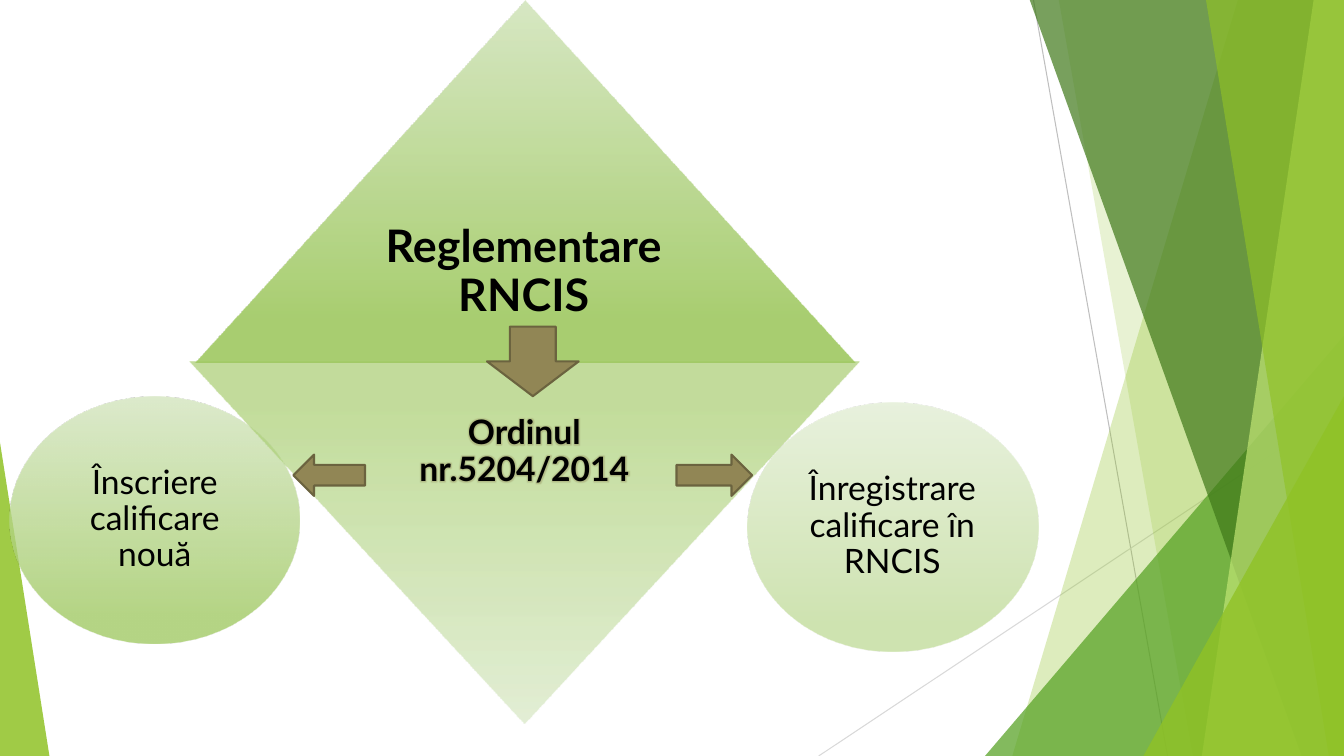
from dataclasses import dataclass

from lxml import etree
from pptx import Presentation
from pptx.dml.color import RGBColor
from pptx.enum.shapes import MSO_CONNECTOR, MSO_SHAPE as SHAPE
from pptx.enum.text import MSO_ANCHOR, PP_ALIGN
from pptx.oxml.ns import qn
from pptx.util import Inches, Pt


@dataclass(frozen=True)
class Theme:
    font: str = "Lato"
    title: int = 32
    body: int = 24
    text: str = "000000"
    lime: str = "90C226"
    green: str = "54A021"
    forest: str = "3F7819"
    pale: str = "C0E474"
    grad_top: str = "D3E5BE"
    grad_end: str = "A0C962"
    arrow: str = "918655"
    arrow_line: str = "6B633F"
    rule_dark: str = "BFBFBF"
    rule_light: str = "D9D9D9"


THEME = Theme()
TOP, RIGHT, BOTTOM = -0.01, 13.33, 7.5


def rgb(value):
    return RGBColor.from_string(value)


def set_alpha(fill, percent):
    for color in fill._xPr.iter(qn("a:srgbClr")):
        etree.SubElement(color, qn("a:alpha"), val=str(percent * 1000))


def fill_solid(sp, color, alpha=None):
    sp.shadow.inherit = False
    sp.fill.solid()
    sp.fill.fore_color.rgb = rgb(color)
    if alpha is not None:
        set_alpha(sp.fill, alpha)
    sp.line.fill.background()


def add_rule(slide, start, end, color):
    line = slide.shapes.add_connector(
        MSO_CONNECTOR.STRAIGHT, *map(Inches, start + end))
    line.line.color.rgb = rgb(color)
    line.line.width = Pt(0.75)
    etree.SubElement(line._element.spPr, qn("a:effectLst"))


def add_band(slide, top_left, bottom_left, color, alpha):
    points = [(top_left, TOP), (RIGHT, TOP), (RIGHT, BOTTOM),
              (bottom_left, BOTTOM)]
    points = [(Inches(x), Inches(y)) for x, y in points]
    builder = slide.shapes.build_freeform(*points[0])
    builder.add_line_segments(points[1:], close=True)
    fill_solid(builder.convert_to_shape(), color, alpha)


def add_corner(slide, box, apex, color, alpha):
    sp = slide.shapes.add_shape(SHAPE.ISOSCELES_TRIANGLE, *map(Inches, box))
    sp.adjustments[0] = apex
    fill_solid(sp, color, alpha)


def add_gradient_shape(slide, kind, box, alpha, rotation=0):
    sp = slide.shapes.add_shape(kind, *map(Inches, box))
    sp.shadow.inherit = False
    sp.rotation = rotation
    sp.fill.gradient()
    sp.fill.gradient_angle = 270
    stops = zip(sp.fill.gradient_stops,
                ((0, THEME.grad_top), (0.88, THEME.grad_end)))
    for stop, (position, color) in stops:
        stop.position = position
        stop.color.rgb = rgb(color)
    set_alpha(sp.fill, alpha)
    sp.line.fill.background()


def add_glow(r):
    effects = etree.Element(qn("a:effectLst"))
    glow = etree.SubElement(effects, qn("a:glow"), rad=str(Pt(5)))
    color = etree.SubElement(glow, qn("a:srgbClr"), val=THEME.arrow)
    etree.SubElement(color, qn("a:alpha"), val="40000")
    r._r.rPr.find(qn("a:solidFill")).addnext(effects)


def add_label(slide, box, text, size, inset=0.1, bold=False, glow=False):
    tf = slide.shapes.add_textbox(*map(Inches, box)).text_frame
    frame = {"word_wrap": True, "vertical_anchor": MSO_ANCHOR.MIDDLE}
    for side in ("left", "top", "right", "bottom"):
        frame[f"margin_{side}"] = Inches(inset)
    for name, value in frame.items():
        setattr(tf, name, value)
    p = tf.paragraphs[0]
    paragraph = {"alignment": PP_ALIGN.CENTER, "line_spacing": 0.9,
                 "space_after": Pt(size * 0.35)}
    for name, value in paragraph.items():
        setattr(p, name, value)
    r = p.add_run()
    r.text = text
    font = {"name": THEME.font, "size": Pt(size), "bold": bold}
    for name, value in font.items():
        setattr(r.font, name, value)
    r.font.color.rgb = rgb(THEME.text)
    if glow:
        add_glow(r)


def add_arrow(slide, kind, box):
    sp = slide.shapes.add_shape(kind, *map(Inches, box))
    fill_solid(sp, THEME.arrow)
    sp.line.color.rgb = rgb(THEME.arrow_line)
    sp.line.width = Pt(1.5)


def add_backdrop(slide):
    add_rule(slide, (10.25, 0), (11.58, BOTTOM), THEME.rule_dark)
    add_rule(slide, (RIGHT, 4.03), (8.12, BOTTOM), THEME.rule_light)
    add_band(slide, 12.28, 10.04, THEME.lime, 30)
    add_band(slide, 10.5, 11.83, THEME.lime, 20)
    add_corner(slide, (9.77, 3.33, 3.56, 4.17), 1, THEME.green, 72)
    add_band(slide, 10.21, 12.91, THEME.forest, 70)
    add_band(slide, 13.03, 11.92, THEME.pale, 70)
    add_band(slide, 11.96, 13.18, THEME.lime, 65)
    add_corner(slide, (11.34, 3.93, 1.99, 3.57), 1, THEME.lime, 80)
    add_corner(slide, (0, 4.39, 0.49, 3.11), 0, THEME.lime, 85)


def add_diagram(slide):
    triangle, ellipse = SHAPE.ISOSCELES_TRIANGLE, SHAPE.OVAL
    add_gradient_shape(slide, triangle, (1.93, 0.01, 6.55, 3.59), 90)
    add_label(slide, (3.56, 1.81, 3.27, 1.79), "Reglementare RNCIS",
              THEME.title, inset=0.13, bold=True)
    add_gradient_shape(slide, ellipse, (0.1, 3.93, 2.87, 2.45), 77)
    add_label(slide, (0.52, 4.29, 2.03, 1.73), "Înscriere calificare nouă",
              THEME.body)
    add_gradient_shape(slide, triangle, (1.88, 3.59, 6.64, 3.59), 63, 180)
    add_label(slide, (3.54, 3.59, 3.32, 1.79), "Ordinul nr.5204/2014",
              THEME.body, bold=True, glow=True)
    add_gradient_shape(slide, ellipse, (7.41, 3.99, 2.89, 2.47), 50)
    add_label(slide, (7.83, 4.35, 2.04, 1.74),
              "Înregistrare calificare în RNCIS", THEME.body)
    add_arrow(slide, SHAPE.DOWN_ARROW, (4.83, 3.24, 0.91, 0.69))
    add_arrow(slide, SHAPE.LEFT_ARROW, (2.91, 4.51, 0.71, 0.41))
    add_arrow(slide, SHAPE.RIGHT_ARROW, (6.71, 4.51, 0.75, 0.41))


def main():
    prs = Presentation()
    prs.slide_width, prs.slide_height = Inches(13.33), Inches(7.5)
    slide = prs.slides.add_slide(prs.slide_layouts[6])
    add_backdrop(slide)
    add_diagram(slide)
    prs.save("out.pptx")


if __name__ == "__main__":
    main()
